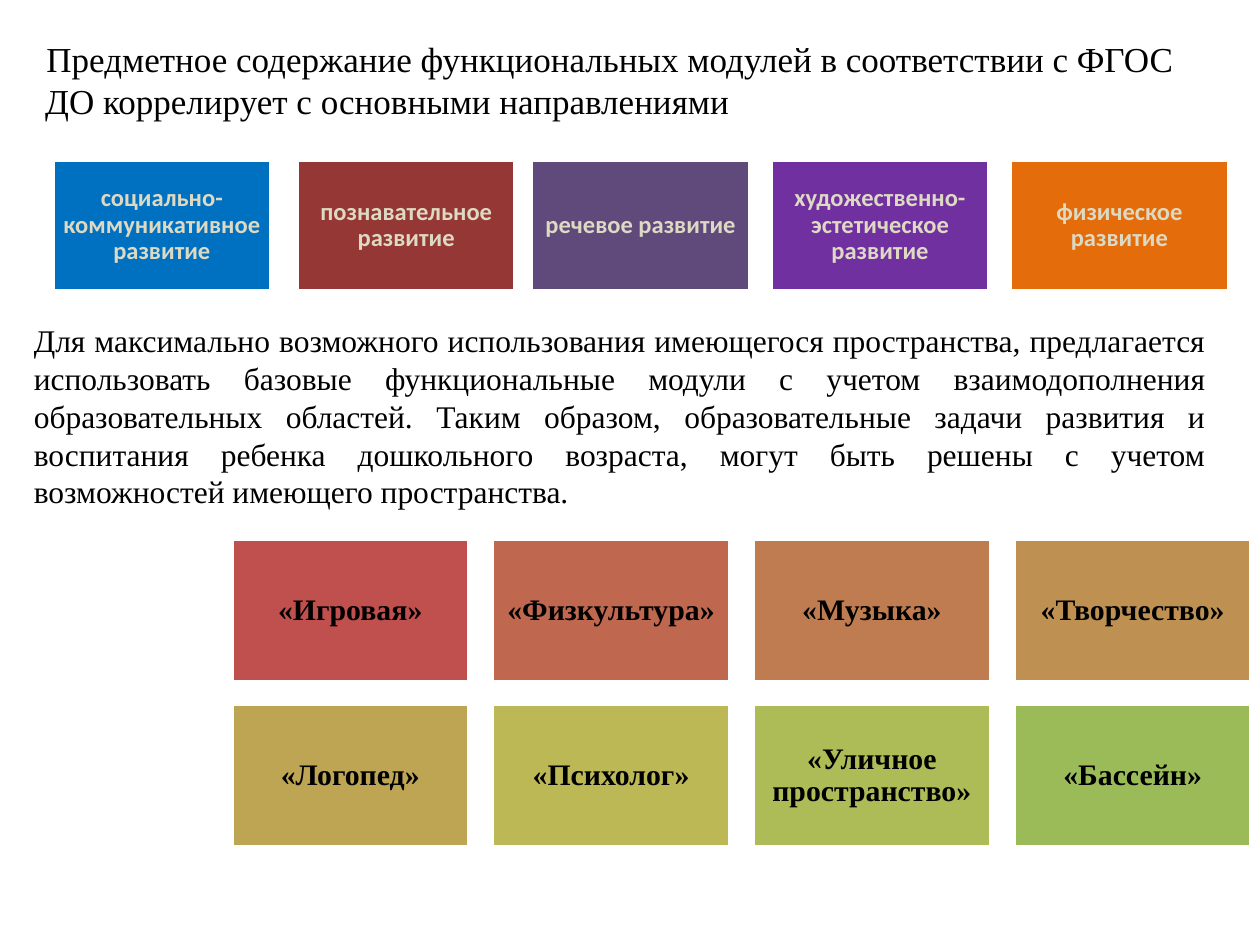
from dataclasses import dataclass

from pptx import Presentation
from pptx.dml.color import RGBColor
from pptx.enum.shapes import MSO_SHAPE as Preset
from pptx.enum.text import MSO_ANCHOR as Anchor, PP_ALIGN as Align
from pptx.slide import Slide
from pptx.text.text import TextFrame, _Paragraph as Paragraph
from pptx.util import Emu, Pt

EMU_PER_PX = 9144  # 100 px to the inch
SERIF = "Times New Roman"
COLORS = {"black": "000000", "white": "FFFFFF", "sand": "DDD9C3"}

TITLE = (
    "Предметное содержание функциональных модулей в соответствии с ФГОС ДО "
    "коррелирует с основными направлениями"
)
EXPLANATION = (
    "Для максимально возможного использования имеющегося пространства, предлагается "
    "использовать базовые функциональные модули с учетом взаимодополнения "
    "образовательных областей. Таким образом, образовательные задачи развития и "
    "воспитания ребенка дошкольного возраста, могут быть решены с учетом "
    "возможностей имеющего пространства."
)


@dataclass(frozen=True)
class Area:
    left: int
    top: int
    width: int
    height: int


@dataclass(frozen=True)
class TextStyle:
    font: str
    size: int
    color: str
    bold: bool = False


@dataclass(frozen=True)
class Tile:
    label: str
    fill: str
    left: int


TITLE_STYLE = TextStyle(SERIF, 20, "black")
BODY_STYLE = TextStyle(SERIF, 18, "black")
DIRECTION_STYLE = TextStyle("Calibri", 14, "sand", bold=True)
MODULE_STYLE = TextStyle(SERIF, 17, "black", bold=True)

DIRECTIONS = [
    Tile("социально-коммуникативное развитие", "0070C0", 42),
    Tile("познавательное развитие", "953735", 236),
    Tile("речевое развитие", "604A7B", 422),
    Tile("художественно-эстетическое развитие", "7030A0", 612),
    Tile("физическое развитие", "E46C0A", 802),
]
MODULES = [
    ("«Игровая»", "C0504D"),
    ("«Физкультура»", "BF674F"),
    ("«Музыка»", "BF7C50"),
    ("«Творчество»", "BE9152"),
    ("«Логопед»", "BDA554"),
    ("«Психолог»", "BCB856"),
    ("«Уличное пространство»", "AEBC57"),
    ("«Бассейн»", "9BBB59"),
]
MODULE_COLUMNS = 4
MODULE_LEFT, MODULE_TOP = 184, 428
MODULE_STEP_X, MODULE_STEP_Y = 207, 131


def px(length: int) -> Emu:
    return Emu(length * EMU_PER_PX)


def bounds(area: Area) -> tuple[Emu, Emu, Emu, Emu]:
    return px(area.left), px(area.top), px(area.width), px(area.height)


def write(frame: TextFrame, text: str, style: TextStyle, align: Align) -> Paragraph:
    frame.word_wrap = True
    para = frame.paragraphs[0]
    para.text = text
    para.alignment = align
    span = para.runs[0]
    span.font.name = style.font
    span.font.size = Pt(style.size)
    span.font.bold = style.bold
    span.font.color.rgb = RGBColor.from_string(COLORS[style.color])
    return para


def add_text(page: Slide, area: Area, text: str, style: TextStyle, align: Align) -> Paragraph:
    box = page.shapes.add_textbox(*bounds(area))
    return write(box.text_frame, text, style, align)


def add_tile(page: Slide, area: Area, tile: Tile, style: TextStyle, inset: int) -> None:
    box = page.shapes.add_shape(Preset.RECTANGLE, *bounds(area))
    box.shadow.inherit = False
    box.fill.solid()
    box.fill.fore_color.rgb = RGBColor.from_string(tile.fill)
    box.line.color.rgb = RGBColor.from_string(COLORS["white"])
    box.line.width = Pt(2)
    frame = box.text_frame
    frame.vertical_anchor = Anchor.MIDDLE
    frame.margin_left = frame.margin_right = px(inset)
    frame.margin_top = frame.margin_bottom = px(inset)
    para = write(frame, tile.label, style, Align.CENTER)
    para.line_spacing = 0.9


def add_title(page: Slide) -> None:
    para = add_text(page, Area(17, 25, 967, 83), TITLE, TITLE_STYLE, Align.LEFT)
    para.space_before = Pt(4)
    properties = para._p.get_or_add_pPr()
    properties.set("marL", str(px(9)))
    properties.set("indent", str(px(1)))


def add_directions(page: Slide) -> None:
    for tile in DIRECTIONS:
        add_tile(page, Area(tile.left, 127, 173, 104), tile, DIRECTION_STYLE, inset=6)


def add_modules(page: Slide) -> None:
    for index, (label, fill) in enumerate(MODULES):
        row, column = divmod(index, MODULE_COLUMNS)
        tile = Tile(label, fill, MODULE_LEFT + column * MODULE_STEP_X)
        area = Area(tile.left, MODULE_TOP + row * MODULE_STEP_Y, 188, 113)
        add_tile(page, area, tile, MODULE_STYLE, inset=7)


def main() -> None:
    deck = Presentation()
    deck.slide_width, deck.slide_height = px(1000), px(750)
    page = deck.slides.add_slide(deck.slide_layouts[6])
    add_title(page)
    add_directions(page)
    add_text(page, Area(17, 250, 950, 162), EXPLANATION, BODY_STYLE, Align.JUSTIFY)
    add_modules(page)
    deck.save("out.pptx")


if __name__ == "__main__":
    main()
